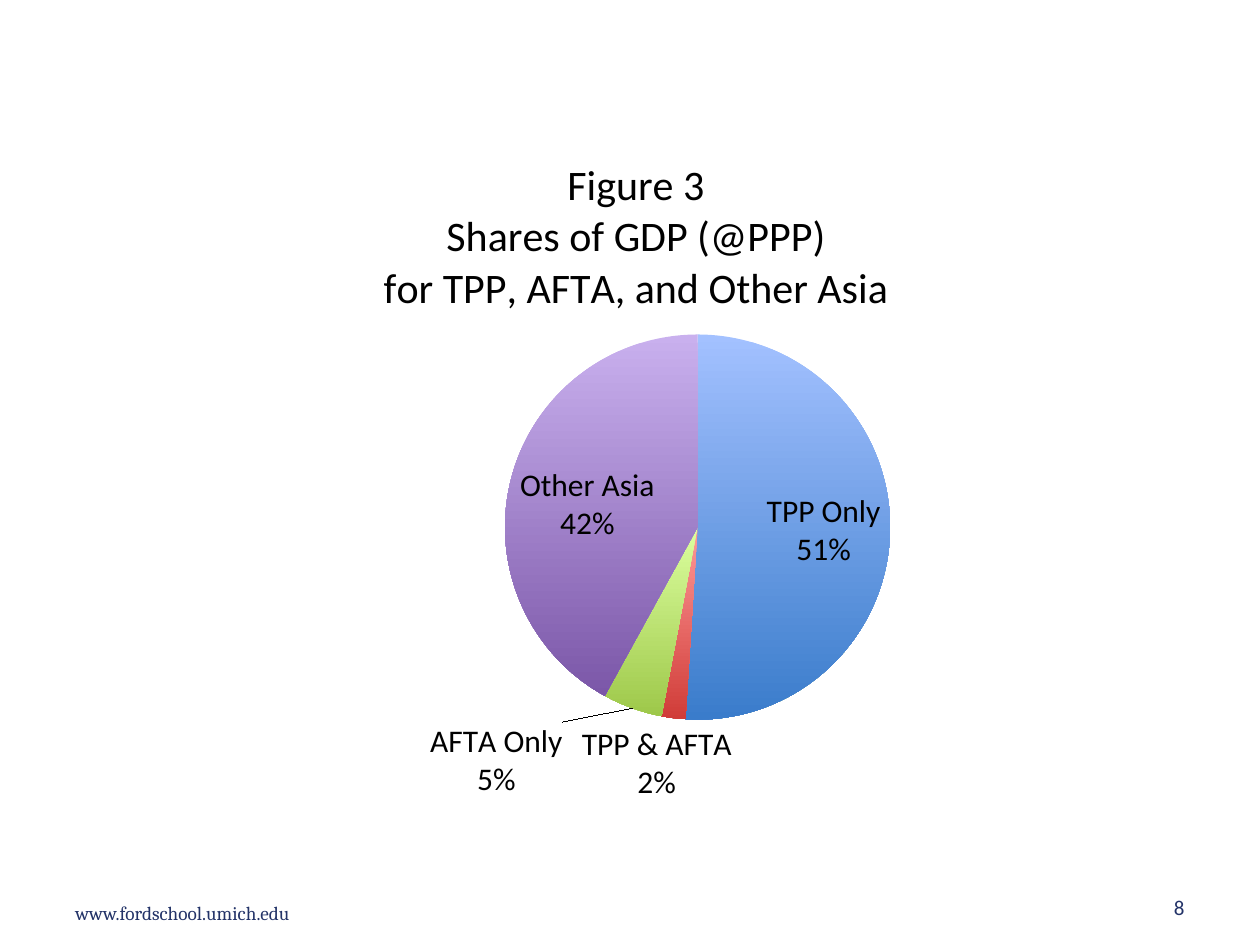
"""Build a slide with a pie chart of GDP shares for TPP, AFTA and other Asia."""
from dataclasses import dataclass

from lxml.etree import SubElement
from pptx import Presentation
from pptx.chart.data import CategoryChartData
from pptx.dml.color import RGBColor
from pptx.enum.chart import XL_CHART_TYPE as ChartType, XL_LABEL_POSITION as LabelPosition
from pptx.enum.text import MSO_ANCHOR as Anchor, PP_ALIGN as Align
from pptx.oxml import parse_xml
from pptx.oxml.ns import nsdecls, qn
from pptx.util import Cm, Pt


@dataclass(frozen=True)
class Theme:
    body_font: str = "Calibri"
    footer_font: str = "Cambria"
    ink: str = "000000"
    navy: str = "233368"
    title_size: int = 24
    label_size: int = 18
    number_size: int = 12
    footer_size: int = 11


theme = Theme()


def write_text(paragraph, text, *, size, font=theme.body_font, color=theme.ink, align=None):
    paragraph.alignment = align
    run = paragraph.add_run()
    run.text = text
    run.font.size = Pt(size)
    run.font.name = font
    run.font.bold = False
    run.font.color.rgb = RGBColor.from_string(color)


def place(element, index, modes=(), **fractions):
    for old_layout in element.findall(qn("c:layout")):
        element.remove(old_layout)
    layout = parse_xml(f"<c:layout {nsdecls('c')}><c:manualLayout/></c:layout>")
    for name, value in [*modes, *fractions.items()]:
        SubElement(layout[0], qn(f"c:{name}")).set("val", str(value))
    element.insert(index, layout)


presentation = Presentation()
presentation.slide_width, presentation.slide_height = Cm(25.4), Cm(19.05)
slide = presentation.slides.add_slide(presentation.slide_layouts[6])

footers = [
    ("www.fordschool.umich.edu", (1.27, 18.03, 6.91, 0.74),
     dict(size=theme.footer_size, font=theme.footer_font, align=Align.LEFT)),
    ("8", (18.21, 17.65, 5.92, 1.02), dict(size=theme.number_size, align=Align.RIGHT)),
]
for text, box, text_format in footers:
    frame = slide.shapes.add_textbox(*map(Cm, box)).text_frame
    frame.word_wrap = True
    frame.vertical_anchor = Anchor.BOTTOM
    write_text(frame.paragraphs[0], text, color=theme.navy, **text_format)

shares = [
    ("TPP Only", 51, "A3C1FF", "3A7CCB"),
    ("TPP & AFTA", 2, "FF9A99", "D03C38"),
    ("AFTA Only", 5, "DCFF9F", "9EC84A"),
    ("Other Asia", 42, "C9B0EE", "7B57A8"),
]
chart_data = CategoryChartData(number_format="0.00")
chart_data.categories = [name for name, *_ in shares]
chart_data.add_series("Series 1", [value for _, value, *_ in shares])
chart = slide.shapes.add_chart(
    ChartType.PIE, Cm(3), Cm(2.57), Cm(19.41), Cm(13.89), chart_data
).chart
chart.has_legend = False
chart.font.name = theme.body_font
chart.font.size = Pt(theme.label_size)
chart.font.color.rgb = RGBColor.from_string(theme.ink)

title_frame = chart.chart_title.text_frame
title_lines = ["Figure 3", "Shares of GDP (@PPP)", "for TPP, AFTA, and Other Asia"]
for index, line in enumerate(title_lines):
    paragraph = title_frame.add_paragraph() if index else title_frame.paragraphs[0]
    write_text(paragraph, line, size=theme.title_size, align=Align.CENTER)

plot = chart.plots[0]
plot.vary_by_categories = True
series = plot.series[0]
for index, (_, _, top_color, bottom_color) in enumerate(shares):
    fill = series.points[index].format.fill
    fill.gradient()
    fill.gradient_angle = 270
    for stop, color in zip(fill.gradient_stops, (top_color, bottom_color)):
        stop.color.rgb = RGBColor.from_string(color)

labels = series.data_labels
labels.number_format = "0%"
labels.number_format_is_linked = False
moved_label = series.points[2].data_label
for label in (labels, moved_label):
    label.position = LabelPosition.BEST_FIT
    label.font.size = Pt(theme.label_size)
    label.font.name = theme.body_font
    label.font.color.rgb = RGBColor.from_string(theme.ink)

shown = {"showVal": "0", "showCatName": "1", "showPercent": "1"}
for element in chart.element.xpath(".//c:ser/c:dLbls | .//c:dLbl"):
    for name, value in shown.items():
        element.find(qn(f"c:{name}")).set("val", value)
    separator = parse_xml(f"<c:separator {nsdecls('c')}>\n</c:separator>")
    element.find(qn("c:showPercent")).getnext().addnext(separator)

edges = [("xMode", "edge"), ("yMode", "edge")]
place(chart.element.xpath(".//c:chart/c:title")[0], 1, edges, x=0.24, y=0.04)
place(chart.element.xpath(".//c:plotArea")[0], 0, [("layoutTarget", "inner"), *edges],
      x=0.37, y=0.3, w=0.4, h=0.56)
place(chart.element.xpath(".//c:dLbl")[0], 1, x=-0.07, y=0.01)

presentation.save("out.pptx")
